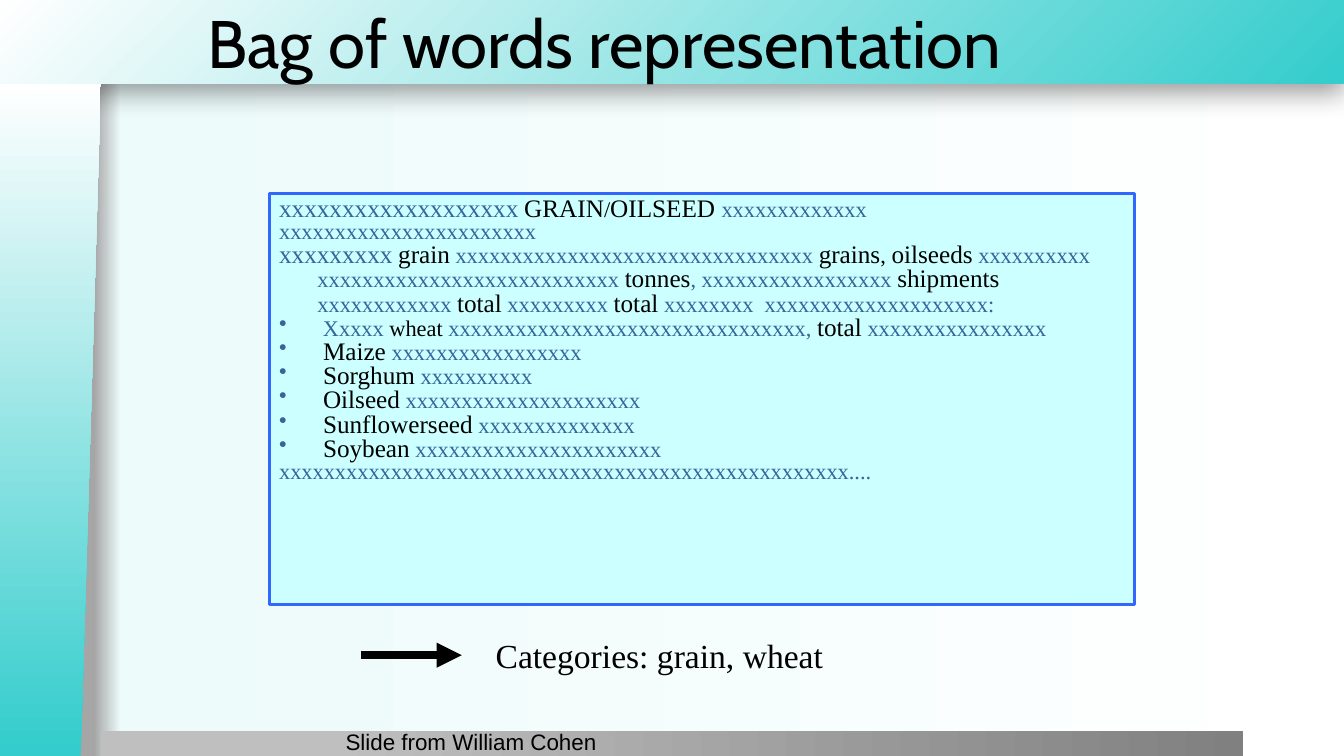
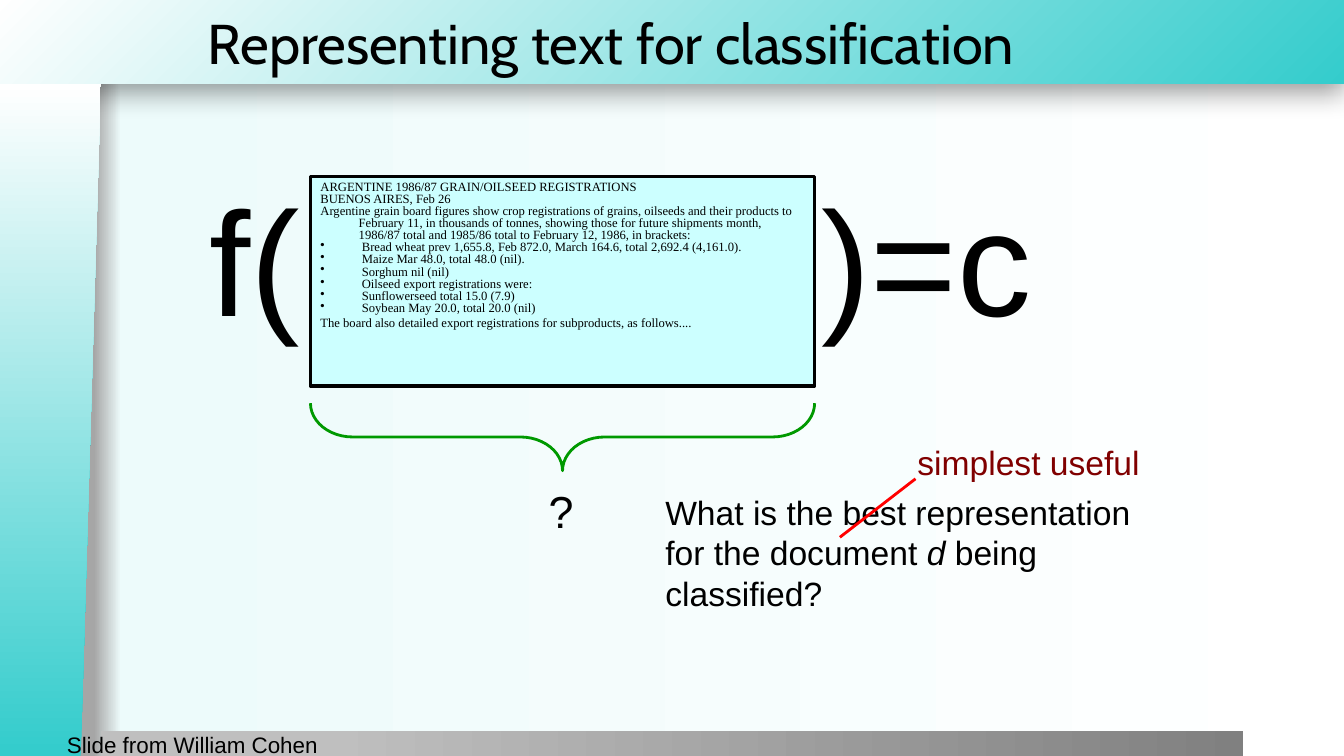
"""Build two slides on representing text for classification."""
from lxml import etree
from pptx import Presentation
from pptx.dml.color import RGBColor
from pptx.enum.shapes import MSO_CONNECTOR, MSO_SHAPE
from pptx.enum.text import MSO_ANCHOR as ANCHOR, MSO_AUTO_SIZE as AUTO_SIZE, PP_ALIGN as ALIGN
from pptx.oxml.ns import qn
from pptx.util import Inches, Pt

COLORS = {
    "black": "000000", "white": "FFFFFF", "teal": "34CCCC", "mist": "EDFBFB",
    "edge_gray": "A6A6A6", "light_gray": "BFBFBF", "dark_gray": "808080",
    "paper": "CCFFFF", "frame_blue": "3366FF", "masked_blue": "336699",
    "green": "009900", "red": "FF0000", "maroon": "800000",
}
SERIF, SANS, TITLE_FONT = "Times New Roman", "Arial", "Cabin"
CREDIT = "Slide from William Cohen"
STYLES = {
    "masked": {"name": SERIF, "size": Pt(16), "color": "masked_blue"},
    "masked_large": {"name": SERIF, "size": Pt(18), "color": "masked_blue"},
    "keyword": {"name": SERIF, "size": Pt(18), "color": "black"},
    "keyword_small": {"name": SERIF, "size": Pt(16), "color": "black"},
    "news": {"name": SERIF, "size": Pt(9), "color": "black"},
    "end_space": {"name": SERIF, "size": Pt(12), "color": "black"},
    "category": {"name": SERIF, "size": Pt(24), "color": "black"},
    "credit": {"name": SANS, "size": Pt(16), "color": "black"},
    "formula": {"name": SANS, "size": Pt(106), "color": "black"},
    "unknown": {"name": SANS, "size": Pt(32), "color": "black"},
    "question": {"name": SANS, "size": Pt(24), "color": "black"},
    "question_italic": {"name": SANS, "size": Pt(24), "color": "black", "italic": True},
    "correction": {"name": SANS, "size": Pt(24), "color": "maroon"},
    "title_large": {"name": TITLE_FONT, "size": Pt(48), "color": "black"},
    "title": {"name": TITLE_FONT, "size": Pt(40), "color": "black"},
}
MASKED_HEAD = [
    [("xxxxxxxxxxxxxxxxxxx", "masked_large"), (" ", "masked"), ("GRAIN", "keyword"),
     ("/", "keyword_small"), ("OILSEED ", "keyword"), ("xxxxxxxxxxxxx", "masked")],
    [("xxxxxxxxxxxxxxxxxxxxxxx", "masked")],
    [("xxxxxxxxx", "masked_large"), (" ", "keyword_small"), ("grain", "keyword"),
     (" xxxxxxxxxxxxxxxxxxxxxxxxxxxxxxxx ", "masked"), ("grains", "keyword"),
     (", ", "keyword_small"), ("oilseeds", "keyword"),
     (" xxxxxxxxxx xxxxxxxxxxxxxxxxxxxxxxxxxxx ", "masked"), ("tonnes", "keyword"),
     (", xxxxxxxxxxxxxxxxx ", "masked"), ("shipments", "keyword"),
     (" xxxxxxxxxxxx ", "masked"), ("total", "keyword"), (" xxxxxxxxx ", "masked"),
     ("total", "keyword"), (" xxxxxxxx  xxxxxxxxxxxxxxxxxxxx:", "masked")],
]
MASKED_CROPS = [
    ("Maize", "xxxxxxxxxxxxxxxxx"),
    ("Sorghum", "xxxxxxxxxx"),
    ("Oilseed", "xxxxxxxxxxxxxxxxxxxxx"),
    ("Sunflowerseed", "xxxxxxxxxxxxxx"),
    ("Soybean", "xxxxxxxxxxxxxxxxxxxxxx"),
]
MASKED_BULLETS = [
    [(" Xxxxx ", "masked"), ("wheat", "keyword_small"),
     (" xxxxxxxxxxxxxxxxxxxxxxxxxxxxxxxx, ", "masked"), ("total", "keyword"),
     (" xxxxxxxxxxxxxxxx", "masked")],
] + [[(" ", "masked"), (crop, "keyword"), (f" {mask}", "masked")] for crop, mask in MASKED_CROPS]
MASKED_END = [("xxxxxxxxxxxxxxxxxxxxxxxxxxxxxxxxxxxxxxxxxxxxxxxxxxx....", "masked"), (" ", "end_space")]
NEWS_HEAD = [[(text, "news")] for text in (
    "ARGENTINE 1986/87 GRAIN/OILSEED REGISTRATIONS",
    "BUENOS AIRES, Feb 26",
    "Argentine grain board figures show crop registrations of grains, oilseeds and their "
    "products to February 11, in thousands of tonnes, showing those for future shipments "
    "month, 1986/87 total and 1985/86 total to February 12, 1986, in brackets:",
)]
NEWS_BULLETS = [[(f" {text}", "news")] for text in (
    "Bread wheat prev 1,655.8, Feb 872.0, March 164.6, total 2,692.4 (4,161.0).",
    "Maize Mar 48.0, total 48.0 (nil).",
    "Sorghum nil (nil)",
    "Oilseed export registrations were:",
    "Sunflowerseed total 15.0 (7.9)",
    "Soybean May 20.0, total 20.0 (nil)",
)]
NEWS_END = [
    ("The board also detailed export registrations for subproducts, as follows....", "news"),
    (" ", "end_space"),
]


def rgb(name):
    """Return the named colour."""
    return RGBColor.from_string(COLORS[name])


def inches(box):
    """Convert a tuple of inch values to lengths."""
    return [Inches(value) for value in box]


def add_xml(parent, tag, **attributes):
    """Append a child element with the given attributes."""
    return etree.SubElement(parent, qn(tag), attributes)


def set_gradient(fill, owner, stops, corner=False):
    """Give a fill gradient stops, running rightwards or out of the lower right corner."""
    fill.gradient()
    gradient = owner.find(".//" + qn("a:gradFill"))
    for child in list(gradient):
        gradient.remove(child)
    stop_list = add_xml(gradient, "a:gsLst")
    for percent, color in stops:
        stop = add_xml(stop_list, "a:gs", pos=str(percent * 1000))
        add_xml(stop, "a:srgbClr", val=COLORS[color])
    if corner:
        center = add_xml(gradient, "a:path", path="circle")
        add_xml(center, "a:fillToRect", l="100000", t="100000")
    else:
        add_xml(gradient, "a:lin", ang="0", scaled="0")


def add_plain_shape(slide, kind, box, fill=None, line=None, width=2.25):
    """Add a shape without shadow, with an optional fill and outline."""
    shape = slide.shapes.add_shape(kind, *inches(box))
    shape.shadow.inherit = False
    if fill:
        shape.fill.solid()
        shape.fill.fore_color.rgb = rgb(fill)
    else:
        shape.fill.background()
    if line:
        shape.line.color.rgb = rgb(line)
        shape.line.width = Pt(width)
    else:
        shape.line.fill.background()
    return shape


def write_runs(paragraph, runs):
    """Write styled runs into a paragraph."""
    for text, style in runs:
        run = paragraph.add_run()
        run.text = text
        for key, value in STYLES[style].items():
            if key == "color":
                run.font.color.rgb = rgb(value)
            else:
                setattr(run.font, key, value)


def add_text(slide, box, runs, align=ALIGN.LEFT, wrap=True, grow=True):
    """Add a text box with one paragraph."""
    frame = slide.shapes.add_textbox(*inches(box)).text_frame
    frame.word_wrap = wrap
    frame.auto_size = AUTO_SIZE.SHAPE_TO_FIT_TEXT if grow else AUTO_SIZE.NONE
    frame.paragraphs[0].alignment = align
    write_runs(frame.paragraphs[0], runs)


def add_line(slide, start, end, color, width, arrow=False):
    """Add a straight line, with an arrowhead if wanted."""
    line = slide.shapes.add_connector(MSO_CONNECTOR.STRAIGHT, *inches(start + end))
    line.line.color.rgb = rgb(color)
    line.line.width = Pt(width)
    if arrow:
        add_xml(line.line._get_or_add_ln(), "a:tailEnd", type="triangle")
    add_xml(line.element.spPr, "a:effectLst")


def add_document(slide, box, frame_color, head, bullets, end):
    """Add a framed document with hanging paragraphs and a bullet list."""
    shape = add_plain_shape(slide, MSO_SHAPE.RECTANGLE, box, "paper", frame_color)
    frame = shape.text_frame
    frame.word_wrap = True
    frame.vertical_anchor = ANCHOR.TOP
    entries = [(runs, False) for runs in head] + [(runs, True) for runs in bullets] + [(end, False)]
    for index, (runs, bulleted) in enumerate(entries):
        paragraph = frame.add_paragraph() if index else frame.paragraphs[0]
        paragraph.alignment = ALIGN.LEFT
        paragraph.line_spacing = 0.8
        properties = paragraph._p.get_or_add_pPr()
        properties.set("marL", str(Inches(0.38)))
        properties.set("indent", str(-Inches(0.38)))
        if bulleted:
            add_xml(properties, "a:buChar", char="•")
        else:
            add_xml(properties, "a:buNone")
        write_runs(paragraph, runs)


def decorate_layout(layout, slide):
    """Give the layout its background, bands and title place, drawn by way of a slide."""
    set_gradient(layout.background.fill, layout.element,
                 [(7, "edge_gray"), (9, "mist"), (100, "white")])
    bands = [
        (MSO_SHAPE.RECTANGLE, (-0.01, 0, 13.34, 0.83), [(0, "teal"), (100, "white")], True),
        (MSO_SHAPE.RECTANGLE, (1, 7.25, 11.33, 0.26), [(20, "light_gray"), (100, "dark_gray")], False),
        (MSO_SHAPE.FLOWCHART_MANUAL_INPUT, (-2.84, 3.67, 6.68, 1), [(1, "teal"), (100, "white")], False),
    ]
    shapes = []
    for kind, box, stops, corner in bands:
        shape = add_plain_shape(slide, kind, box)
        set_gradient(shape.fill, shape.element, stops, corner)
        shapes.append(shape)
    top, _, side = shapes
    shadow = add_xml(top.element.spPr.find(qn("a:effectLst")), "a:outerShdw",
                     blurRad=str(Pt(20)), dist=str(Pt(6)), dir="5400000", rotWithShape="0")
    add_xml(add_xml(shadow, "a:srgbClr", val=COLORS["black"]), "a:alpha", val="40000")
    side.rotation = 270
    side.element.spPr.find(qn("a:xfrm")).set("flipV", "1")
    for index, shape in enumerate(shapes):
        shape.element.nvSpPr.cNvPr.set("id", str(100 + index))
        layout.shapes.element.insert(2 + index, shape.element)
    title = layout.placeholders[0]
    for key, value in zip(("left", "top", "width", "height"), inches((1.96, 0, 11.38, 0.83))):
        setattr(title, key, value)


def set_title(slide, text, style):
    """Fill and format the title placeholder."""
    frame = slide.shapes.title.text_frame
    for key, value in {"vertical_anchor": ANCHOR.MIDDLE, "auto_size": AUTO_SIZE.NONE,
                       "word_wrap": True}.items():
        setattr(frame, key, value)
    frame.paragraphs[0].alignment = ALIGN.LEFT
    write_runs(frame.paragraphs[0], [(text, style)])


def build_bag_of_words(slide):
    """Show the masked document and its categories."""
    set_title(slide, "Bag of words representation", "title_large")
    add_document(slide, (2.67, 1.92, 8.58, 4.08), "frame_blue",
                 MASKED_HEAD, MASKED_BULLETS, MASKED_END)
    add_text(slide, (4, 6.25, 5.08, 0.5), [("Categories: grain, wheat", "category")], ALIGN.CENTER)
    add_line(slide, (3.58, 6.5), (4.58, 6.5), "black", 6, arrow=True)
    add_text(slide, (3.33, 7.17, 2.83, 0.33), [(CREDIT, "credit")], grow=False)


def add_formula(slide, box):
    """Put the document between the parts of f( )=c, with a brace below it."""
    left, top, width, height = box
    add_document(slide, box, "black", NEWS_HEAD, NEWS_BULLETS, NEWS_END)
    add_text(slide, (left - 1.1, top - 0.13, 1.1, 1.87), [("f(", "formula")], wrap=False)
    add_text(slide, (left + width - 0.03, top - 0.13, 2.31, 1.89), [(")=c", "formula")], wrap=False)
    depth = 0.67
    middle = left + width / 2
    brace_top = top + height + 0.17
    brace = add_plain_shape(slide, MSO_SHAPE.LEFT_BRACE,
                            (middle - depth / 2, brace_top + (depth - width) / 2, depth, width),
                            line="green", width=2)
    brace.rotation = 270
    brace.adjustments[0] = 0.625
    brace.adjustments[1] = 0.5
    add_text(slide, (middle - 0.24, brace_top + 0.75, 0.45, 0.64), [("?", "unknown")],
             ALIGN.CENTER, wrap=False)


def add_question(slide, left, top):
    """Ask the question, with one word struck out and corrected."""
    add_text(slide, (left, top, 4.92, 1.31),
             [("What is the best representation for the document ", "question"),
              ("d", "question_italic"), (" being classified?", "question")])
    add_line(slide, (left + 2.58, top - 0.08), (left + 1.83, top + 0.5), "red", 2)
    add_text(slide, (left + 2.5, top - 0.5, 2.43, 0.51), [("simplest useful", "correction")], wrap=False)


def build_representing_text(slide):
    """Show classification as a function of a document."""
    set_title(slide, "Representing text for classification", "title")
    add_text(slide, (0, 7.2, 3.25, 0.33), [(CREDIT, "credit")], ALIGN.RIGHT, grow=False)
    add_formula(slide, (3.08, 1.75, 5, 2.08))
    add_question(slide, 6.5, 4.83)


def main():
    """Build and save the presentation."""
    presentation = Presentation()
    presentation.slide_width, presentation.slide_height = Inches(13.33), Inches(7.5)
    layout = presentation.slide_layouts[5]
    slides = [presentation.slides.add_slide(layout) for _ in range(2)]
    decorate_layout(layout, slides[0])
    build_bag_of_words(slides[0])
    build_representing_text(slides[1])
    presentation.save("out.pptx")


if __name__ == "__main__":
    main()
